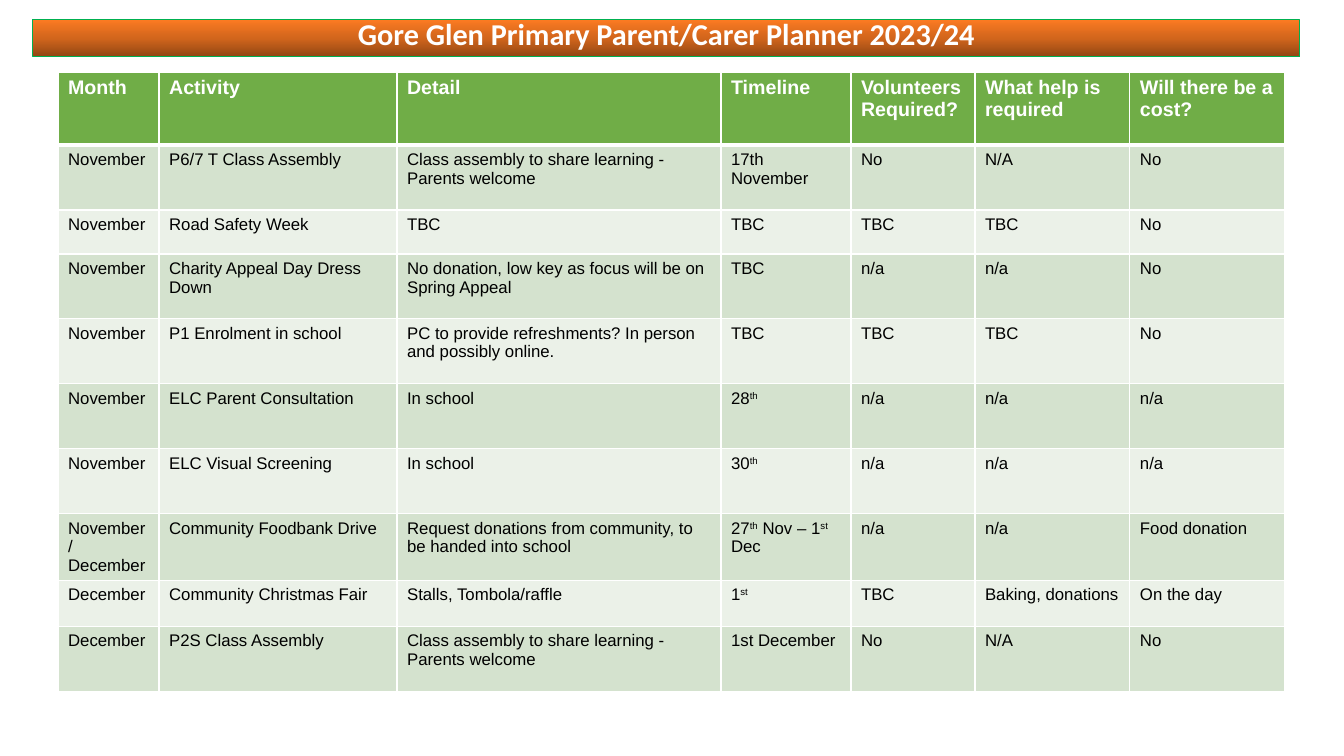
from copy import deepcopy
from dataclasses import dataclass

from lxml.etree import SubElement
from pptx import Presentation
from pptx.dml.color import RGBColor
from pptx.enum.shapes import MSO_SHAPE
from pptx.enum.text import MSO_ANCHOR, PP_ALIGN
from pptx.oxml.ns import qn
from pptx.slide import Slide
from pptx.table import _Cell
from pptx.text.text import _Paragraph
from pptx.util import Emu, Pt

EMU_PER_PX = 914400 / 100.8

WHITE = RGBColor(0xFF, 0xFF, 0xFF)
BLACK = RGBColor(0, 0, 0)
BANNER_LINE = RGBColor(0x00, 0xB0, 0x50)
BANNER_STOPS = [
    (0, RGBColor(0x91, 0x46, 0x13)),
    (0.5, RGBColor(0xD1, 0x65, 0x1C)),
    (1, RGBColor(0xFB, 0x7A, 0x22)),
]
HEADER_GREEN = RGBColor(0x70, 0xAD, 0x47)
BANDS = [RGBColor(0xD4, 0xE2, 0xCE), RGBColor(0xEB, 0xF1, 0xE8)]

TITLE = "Gore Glen Primary Parent/Carer Planner 2023/24"
HEADINGS = ["Month", "Activity", "Detail", "Timeline", "Volunteers Required?",
            "What help is required", "Will there be a cost?"]
COLUMN_WIDTHS = [101, 238, 324, 130, 124, 155, 155]
HEADER_HEIGHT = 73


@dataclass(frozen=True)
class Event:
    """One planner row; in its texts, carets enclose superscripts."""
    month: str
    activity: str
    detail: str
    timeline: str
    volunteers: str
    help_needed: str
    cost: str
    height: int = 65

    def texts(self) -> list[str]:
        return [self.month, self.activity, self.detail, self.timeline,
                self.volunteers, self.help_needed, self.cost]


ASSEMBLY = "Class assembly to share learning - Parents welcome"
EVENTS = [
    Event("November", "P6/7 T Class Assembly", ASSEMBLY, "17th November", "No", "N/A", "No"),
    Event("November", "Road Safety Week", "TBC", "TBC", "TBC", "TBC", "No", height=44),
    Event("November", "Charity Appeal Day Dress Down",
          "No donation, low key as focus will be on Spring Appeal", "TBC", "n/a", "n/a", "No"),
    Event("November", "P1 Enrolment in school",
          "PC to provide refreshments? In person and possibly online.",
          "TBC", "TBC", "TBC", "No"),
    Event("November", "ELC Parent Consultation", "In school", "28^th^", "n/a", "n/a", "n/a"),
    Event("November", "ELC Visual Screening", "In school", "30^th^", "n/a", "n/a", "n/a"),
    Event("November/December", "Community Foodbank Drive",
          "Request donations from community, to be handed into school",
          "27^th^ Nov – 1^st^ Dec", "n/a", "n/a", "Food donation"),
    Event("December", "Community Christmas Fair", "Stalls, Tombola/raffle", "1^st^",
          "TBC", "Baking, donations", "On the day", height=46),
    Event("December", "P2S Class Assembly", ASSEMBLY, "1st December", "No", "N/A", "No"),
]


def px(n: int) -> Emu:
    return Emu(round(n * EMU_PER_PX))


def style_text(p: _Paragraph, name: str, size: float, color: RGBColor, bold: bool) -> None:
    p.font.name = name
    p.font.size = Pt(size)
    p.font.color.rgb = color
    p.font.bold = bold


def add_banner(slide: Slide) -> None:
    sp = slide.shapes.add_shape(MSO_SHAPE.RECTANGLE, px(33), px(20), px(1267), px(37))
    sp.shadow.inherit = False
    sp.line.color.rgb = BANNER_LINE
    sp.line.width = Pt(0.75)
    sp.fill.gradient()
    sp.fill.gradient_angle = 90
    stop_list = sp._element.spPr.find(".//" + qn("a:gsLst"))
    stop_list.append(deepcopy(stop_list[0]))
    for stop, (position, color) in zip(sp.fill.gradient_stops, BANNER_STOPS):
        stop.position = position
        stop.color.rgb = color

    tf = sp.text_frame
    tf.word_wrap = True
    tf.vertical_anchor = MSO_ANCHOR.BOTTOM
    p = tf.paragraphs[0]
    p.alignment = PP_ALIGN.CENTER
    p.line_spacing = 0.9
    p.add_run().text = TITLE
    style_text(p, "Calibri", 21.6, WHITE, True)


def add_borders(cell: _Cell, top: float, bottom: float) -> None:
    """Draw white borders, before the fill as the schema orders them."""
    tc_pr = cell._tc.get_or_add_tcPr()
    for side, width in (("L", 1), ("R", 1), ("T", top), ("B", bottom)):
        ln = SubElement(tc_pr, qn(f"a:ln{side}"), w=str(Pt(width)))
        fill = SubElement(ln, qn("a:solidFill"))
        SubElement(fill, qn("a:srgbClr"), val=str(WHITE))


def write_cell(cell: _Cell, text: str, row: int) -> None:
    is_header = row == 0
    add_borders(cell, top=3 if row == 1 else 1, bottom=3 if is_header else 1)
    cell.fill.solid()
    cell.fill.fore_color.rgb = HEADER_GREEN if is_header else BANDS[(row - 1) % 2]
    p = cell.text_frame.paragraphs[0]
    for i, part in enumerate(text.split("^")):
        if part:
            r = p.add_run()
            r.text = part
            if i % 2:
                r._r.get_or_add_rPr().set("baseline", "30000")
    if is_header:
        style_text(p, "Arial", 14, WHITE, True)
    else:
        style_text(p, "Arial", 12, BLACK, False)


def add_planner(slide: Slide) -> None:
    rows = [HEADINGS] + [event.texts() for event in EVENTS]
    heights = [HEADER_HEIGHT] + [event.height for event in EVENTS]
    table = slide.shapes.add_table(len(rows), len(HEADINGS), px(58), px(72),
                                   px(sum(COLUMN_WIDTHS)), px(sum(heights))).table
    for column, width in zip(table.columns, COLUMN_WIDTHS):
        column.width = px(width)
    for i, (texts, height) in enumerate(zip(rows, heights)):
        table.rows[i].height = px(height)
        for j, text in enumerate(texts):
            write_cell(table.cell(i, j), text, i)


def main() -> None:
    prs = Presentation()
    prs.slide_width = px(1344)
    prs.slide_height = px(756)
    slide = prs.slides.add_slide(prs.slide_layouts[6])
    add_banner(slide)
    add_planner(slide)
    prs.save("out.pptx")


if __name__ == "__main__":
    main()
